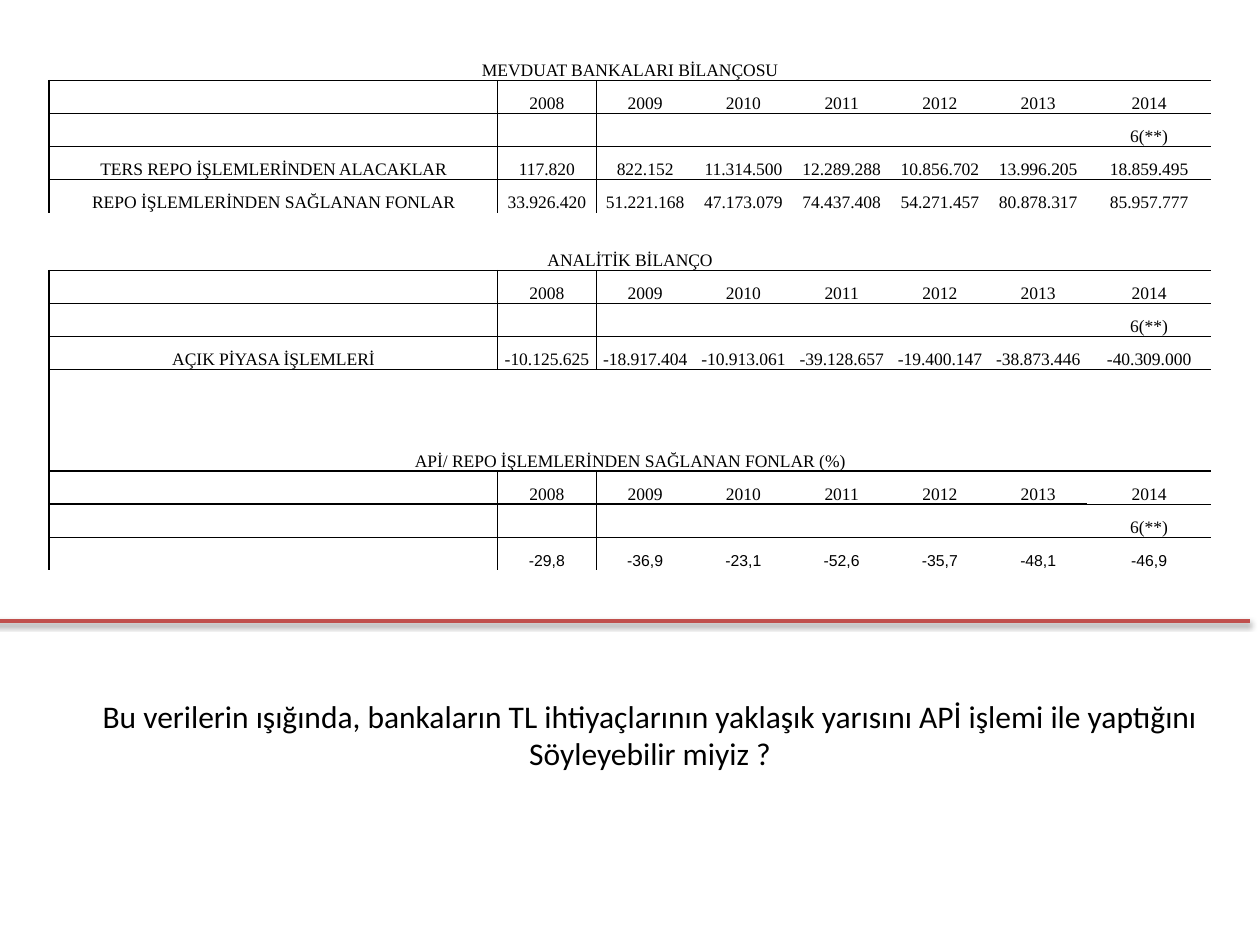
from lxml.etree import SubElement
from pptx import Presentation
from pptx.dml.color import RGBColor
from pptx.enum.shapes import MSO_CONNECTOR
from pptx.enum.text import MSO_ANCHOR, MSO_AUTO_SIZE, PP_ALIGN
from pptx.oxml.ns import qn
from pptx.util import Inches, Pt

BLACK, WHITE, RED = "000000", "FFFFFF", "C0504D"
PLAIN = "{2D5ABB26-0587-4C30-8999-92F81FD0307C}"  # no style, no grid
YEARS = ["2008", "2009", "2010", "2011", "2012", "2013", "2014"]

# First row, heading, value font, value size, then label and values per row
BLOCKS = [
    (0, "MEVDUAT BANKALARI BİLANÇOSU", "Times New Roman", 10, [
        ("TERS REPO İŞLEMLERİNDEN ALACAKLAR",
         ["117.820", "822.152", "11.314.500", "12.289.288", "10.856.702",
          "13.996.205", "18.859.495"]),
        ("REPO İŞLEMLERİNDEN SAĞLANAN FONLAR",
         ["33.926.420", "51.221.168", "47.173.079", "74.437.408",
          "54.271.457", "80.878.317", "85.957.777"])]),
    (6, "ANALİTİK BİLANÇO", "Times New Roman", 10, [
        ("AÇIK PİYASA İŞLEMLERİ",
         ["-10.125.625", "-18.917.404", "-10.913.061", "-39.128.657",
          "-19.400.147", "-38.873.446", "-40.309.000"])]),
    (12, "APİ/ REPO İŞLEMLERİNDEN SAĞLANAN FONLAR (%)", "Arial", 9, [
        ("", ["-29,8", "-36,9", "-23,1", "-52,6", "-35,7", "-48,1",
              "-46,9"])]),
]


def color(code):
    return RGBColor.from_string(code)


def write(frame, text, font="Times New Roman", size=10, ink=BLACK,
          align=PP_ALIGN.CENTER):
    frame.text = text
    for para in frame.paragraphs:
        para.alignment = align
        for run in para.runs:
            run.font.name = font
            run.font.size = Pt(size)
            run.font.color.rgb = color(ink)
        if not para.runs:  # keeps an empty row from growing
            SubElement(para._p, qn("a:endParaRPr"), sz=str(size * 100))


def edge(cell, sides):
    props = cell._tc.get_or_add_tcPr()
    for side in "LRTB":  # order set by the schema
        if side in sides:
            line = SubElement(props, qn("a:ln" + side),
                              w=str(Pt(sides[side])))
            fill = SubElement(line, qn("a:solidFill"))
            SubElement(fill, qn("a:srgbClr"), val=BLACK)


class Deck:
    def __init__(self):
        self.file = Presentation()
        self.file.slide_width = Inches(10)
        self.file.slide_height = Inches(7.5)
        self.slide = self.file.slides.add_slide(self.file.slide_layouts[6])

    def rule(self, left, right, y, ink, width):
        line = self.slide.shapes.add_connector(
            MSO_CONNECTOR.STRAIGHT, Inches(left), Inches(y),
            Inches(right), Inches(y))
        line.line.color.rgb = color(ink)
        line.line.width = Pt(width)
        # Soft shadow below the line
        effect = SubElement(line._element.spPr, qn("a:effectLst"))
        shade = SubElement(effect, qn("a:outerShdw"), blurRad=str(Pt(3.1)),
                           dist=str(Pt(1.6)), dir="5400000", rotWithShape="0")
        tone = SubElement(shade, qn("a:srgbClr"), val=BLACK)
        SubElement(tone, qn("a:alpha"), val="38000")

    def text(self, left, top, width, height, text, **style):
        box = self.slide.shapes.add_textbox(
            Inches(left), Inches(top), Inches(width), Inches(height))
        box.text_frame.word_wrap = True
        box.text_frame.auto_size = MSO_AUTO_SIZE.SHAPE_TO_FIT_TEXT
        write(box.text_frame, text, **style)

    def table(self, left, top, cols, rows):
        frame = self.slide.shapes.add_table(
            len(rows), len(cols), Inches(left), Inches(top),
            sum(cols), sum(rows))
        table = frame.table
        table.first_row = table.horz_banding = False
        table._tbl.tblPr.find(qn("a:tableStyleId")).text = PLAIN
        for col, width in zip(table.columns, cols):
            col.width = width
        for row, height in zip(table.rows, rows):
            row.height = height
        return table

    def cell(self, cell, text, sides, **style):
        cell.margin_left = cell.margin_right = Inches(0.01)
        cell.margin_top, cell.margin_bottom = Inches(0.01), 0
        cell.vertical_anchor = MSO_ANCHOR.BOTTOM
        write(cell.text_frame, text, **style)
        edge(cell, sides)
        cell.fill.solid()
        cell.fill.fore_color.rgb = color(WHITE)


def plan():
    """Collect text, format and borders by cell, and the merged spans."""
    words, styles, sides, spans = {}, {}, {}, []

    def mark(row, col, **lines):
        sides.setdefault((row, col), {}).update(lines)

    for first, title, font, size, data in BLOCKS:
        words[first, 0] = title
        spans.append((first, 8))
        words[first + 2, 8] = "6(**)"
        for col, year in enumerate(YEARS, 2):
            words[first + 1, col] = year
        for row, (label, values) in enumerate(data, first + 3):
            words[row, 0] = label
            spans.append((row, 1))
            for col, value in enumerate(values, 2):
                words[row, col] = value
                styles[row, col] = dict(font=font, size=size)
        # Lines under the heading, under the years and beside the labels
        for col in range(9):
            mark(first, col, B=1)
            mark(first + 1, col, T=1)
            mark(first + 2, col, B=0.5)
            mark(first + 3, col, T=0.5)
        mark(first + 1, 8, B=0.5)
        mark(first + 2, 8, T=0.5)
        for row in range(first + 1, first + 3 + len(data)):
            mark(row, 0, L=1)
            mark(row, 1, R=0.5)
            mark(row, 2, L=0.5)
        for row, end in spans:
            if end == 1:
                mark(row, 0, R=0.5)
    # Left line runs on between the last two blocks
    for row in (10, 11, 12):
        mark(row, 0, L=1)
    return words, styles, sides, spans


def main():
    deck = Deck()

    # Divider
    deck.rule(-0.12, 9.92, 4.93, RED, 2)

    # Question
    deck.text(0.28, 5.48, 9.76, 0.71,
              "Bu verilerin ışığında, bankaların TL ihtiyaçlarının yaklaşık "
              "yarısını APİ işlemi ile yaptığını\nSöyleyebilir miyiz ?",
              font="Calibri", size=18)

    # Balance sheet table
    cols = [Inches(w) for w in [0.63, 2.93] + [0.78] * 6 + [0.98]]
    rows = [Pt(18.9)] * 16
    for row, height in {0: 0.28, 5: 0.22, 6: 0.24, 12: 0.28}.items():
        rows[row] = Inches(height)
    table = deck.table(0.39, 0.36, cols, rows)
    words, styles, sides, spans = plan()
    for row in range(len(rows)):
        for col in range(len(cols)):
            spot = row, col
            deck.cell(table.cell(row, col), words.get(spot, ""),
                      sides.get(spot, {}), **styles.get(spot, {}))
    for row, end in spans:
        table.cell(row, 0).merge(table.cell(row, end))

    deck.file.save("out.pptx")


if __name__ == "__main__":
    main()
